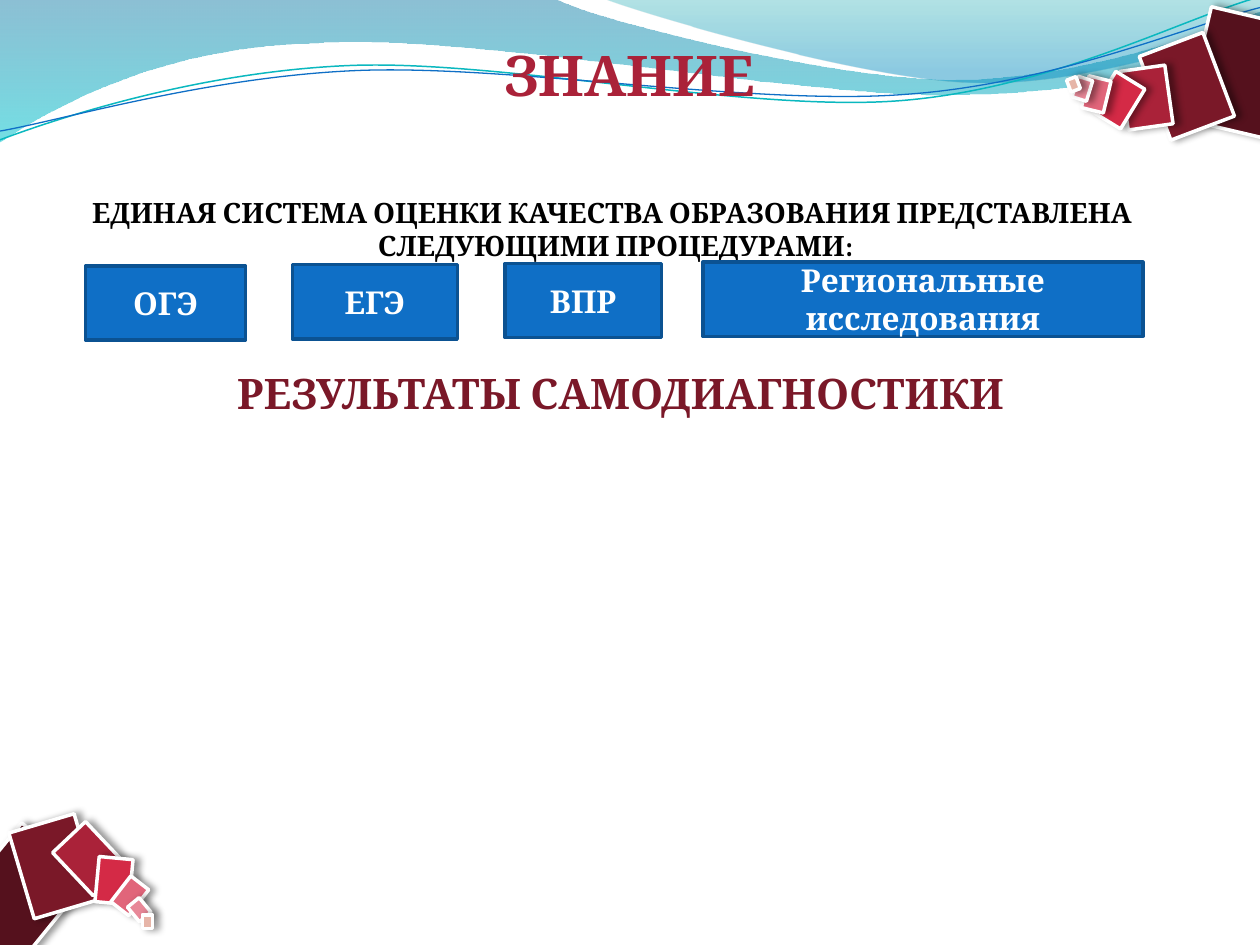
import math
import pptx
import pptx.util
import pptx.dml.color
import pptx.enum.shapes
import pptx.enum.text
import pptx.oxml
import pptx.oxml.ns

WIDTH, HEIGHT = pptx.util.Inches(10), pptx.util.Inches(7.5)
COLUMN, ROW = WIDTH / 100, HEIGHT / 75  # grid of 100 columns by 75 rows
FONT = "Cambria"
WHITE, CRIMSON, DARK_RED = "FFFFFF", "AA2239", "7A1828"
SQUARE_COLOURS = ["55111D", DARK_RED, CRIMSON, "D42A46", "E1657A", "E88898", "E6B5A8"]
NAMESPACE = pptx.oxml.ns.nsdecls("a")
LINE_TILT = -2.7

# Each curve is a start point followed by Bezier segments (three points)
# or straight segments (one point), in columns and rows.
BROAD_WAVE = [
    [(0, 0)], [(44, -0.1)], [(47.6, 1.7), (66.4, 6.3), (75.8, 6.3)],
    [(85.3, 6.3), (95.8, 2.6), (100, 0.9)], [(100.1, 3.6)],
    [(98.3, 4.4), (87, 7.6), (74.6, 7.5)], [(62.2, 7.5), (38.2, 2.8), (25.7, 3.4)],
    [(12.9, 3.6), (4.6, 8.3), (-0.1, 11.3)], [(0, 0)],
]
RIGHT_WAVE = [
    [(47.9, -0.1)], [(50.9, 1.1), (68.2, 6.2), (76.9, 6.5)],
    [(85.6, 6.9), (96.1, 3.2), (100, 2.1)], [(100, 0)], [(47.9, -0.1)],
]
TEAL_LINE = [
    [(0, 11.1)], [(4.8, 9.3), (15.8, 5.7), (27.7, 5.2)],
    [(39.5, 4.7), (59.3, 8.9), (71.3, 8)], [(83.3, 7.1), (93.8, 1.5), (99.8, -0.2)],
]
BLUE_LINE = [
    [(0, 10.4)], [(4.7, 9.6), (16.4, 6.1), (28.3, 5.6)],
    [(40.3, 5.1), (59.7, 8.4), (71.7, 7.5)], [(83.6, 6.7), (94.1, 2.1), (100, 0.6)],
]
# Squares from large to small: left, top, width, height, rotation.
TOP_SQUARES = [
    (10.2, 0, 6.9, 9.2, 13.2), (6.7, 2.1, 5.4, 7.1, 339.3), (4.4, 4.2, 3.6, 4.7, 352),
    (2.1, 5.4, 3.7, 2.7, 301.5), (1.3, 5, 1.8, 2.6, 13.7), (0.5, 5, 1.2, 1.7, 17.2),
    (0, 5, 0.8, 1, 339.2),
]
BOTTOM_SQUARES = [
    (-3.1, 2.4, 9.2, 6.9, 309.1), (1.6, 0, 5.4, 7.1, 343.5), (5.3, 0.6, 3.6, 4.7, 316.7),
    (7.7, 2.9, 2.7, 3.6, 5.4), (9.4, 4.6, 1.8, 2.6, 37.7), (10.3, 6.4, 1.5, 1.2, 50.6),
    (11.3, 7.4, 0.8, 1.1, 0),
]
# Left and width of each procedure, within the row of procedures.
PROCEDURES = [("ОГЭ", 0, 12.7), ("ЕГЭ", 16.4, 13.1), ("ВПР", 33.3, 12.4),
              ("Региональные исследования", 49, 34.9)]


def colour(value):
    return pptx.dml.color.RGBColor.from_string(value)


def place(left, top, width, height):
    """Turn grid cells into slide lengths."""
    return [round(left * COLUMN), round(top * ROW), round(width * COLUMN), round(height * ROW)]


def set_line(shape, line_colour, points):
    shape.line.color.rgb = colour(line_colour)
    shape.line.width = pptx.util.Pt(points)


def write(shape, text, size, text_colour=WHITE, anchor="TOP"):
    frame = shape.text_frame
    frame.word_wrap = True
    frame.vertical_anchor = getattr(pptx.enum.text.MSO_ANCHOR, anchor)
    para = frame.paragraphs[0]
    para.alignment = pptx.enum.text.PP_ALIGN.CENTER
    span = para.add_run()
    span.text = text
    span.font.name, span.font.size, span.font.bold = FONT, pptx.util.Pt(size), True
    span.font.color.rgb = colour(text_colour)


def add_rectangle(page, box, fill, line_colour):
    kind = pptx.enum.shapes.MSO_SHAPE.RECTANGLE
    shape = page.shapes.add_shape(kind, *place(*box))
    shape.shadow.inherit = False
    shape.fill.solid()
    shape.fill.fore_color.rgb = colour(fill)
    set_line(shape, line_colour, 2)
    return shape


def add_heading(page, box, text, **format):
    write(page.shapes.add_textbox(*place(*box)), text, **format)


def turn(point, centre, degrees):
    cosine, sine = math.cos(math.radians(degrees)), math.sin(math.radians(degrees))
    x, y = point[0] - centre[0], point[1] - centre[1]
    return centre[0] + x * cosine - y * sine, centre[1] + x * sine + y * cosine


def add_curve(page, box, segments, close, tilt=0):
    """Draw the segments level within the box, then tilt the shape as a whole."""
    left, top, width, height = box
    centre = (left + width / 2, top + height / 2)
    points = [turn(point, centre, -tilt) for segment in segments for point in segment]
    points = [(x * COLUMN, y * ROW) for x, y in points]
    builder = page.shapes.build_freeform(*points[0], scale=1.0)
    builder.add_line_segments(points[1:], close=close)
    shape = builder.convert_to_shape()
    lines = list(shape.element.iter(pptx.oxml.ns.qn("a:lnTo")))
    for segment in segments[1:]:
        corners, lines = lines[:len(segment)], lines[len(segment):]
        if len(corners) == 3:
            bezier = pptx.oxml.parse_xml(f"<a:cubicBezTo {NAMESPACE}/>")
            corners[0].addprevious(bezier)
            for corner in corners:
                bezier.append(corner[0])
                corner.getparent().remove(corner)
    shape.rotation = tilt
    shape.shadow.inherit = False
    shape.fill.background()
    return shape


def add_waves(page):
    for box, segments, stops in (
        ((-0.1, -0.1, 100.2, 11.4), BROAD_WAVE, [(0, "0074A1", 45), (100, "00C6CF", 55)]),
        ((47.9, -0.1, 52.1, 7), RIGHT_WAVE, [(0, "00A1A9", 30), (80, "008BBF", 45)]),
    ):
        shape = add_curve(page, box, segments, close=True)
        shape.line.fill.background()
        stop_xml = "".join(
            f'<a:gs pos="{position * 1000}"><a:srgbClr val="{value}">'
            f'<a:alpha val="{alpha * 1000}"/></a:srgbClr></a:gs>'
            for position, value, alpha in stops)
        gradient = pptx.oxml.parse_xml(
            f'<a:gradFill {NAMESPACE} rotWithShape="1"><a:gsLst>{stop_xml}</a:gsLst>'
            '<a:lin ang="5400000" scaled="0"/></a:gradFill>')
        properties = shape.element.spPr
        properties.replace(properties.find(pptx.oxml.ns.qn("a:noFill")), gradient)
    for box, segments, value, points in (
        ((-0.2, 2.2, 100.2, 7.1), TEAL_LINE, "0AB8BF", 0.85),
        ((-0.2, 3, 100.3, 5.8), BLUE_LINE, "0F6FC6", 0.75),
    ):
        set_line(add_curve(page, box, segments, False, LINE_TILT), value, points)


def add_squares(page, box, squares):
    for fill, (left, top, width, height, rotation) in zip(SQUARE_COLOURS, squares):
        shape = add_rectangle(page, (box[0] + left, box[1] + top, width, height), fill, WHITE)
        shape.rotation = rotation
        effects = shape.element.spPr.find(pptx.oxml.ns.qn("a:effectLst"))
        effects.append(pptx.oxml.parse_xml(
            f'<a:outerShdw {NAMESPACE} blurRad="{pptx.util.Pt(4)}" dist="{pptx.util.Pt(3)}" '
            'dir="0" algn="l" rotWithShape="0"><a:srgbClr val="000000">'
            '<a:alpha val="40000"/></a:srgbClr></a:outerShdw>'))


def add_procedures(page, box):
    """Place the procedures in a row, each one slightly higher than the last."""
    for index, (name, left, width) in enumerate(PROCEDURES):
        cell = (box[0] + left, box[1] - 0.1 * index, width, box[3])
        write(add_rectangle(page, cell, "0F6FC6", "0B5292"), name, size=18, anchor="MIDDLE")


def main():
    deck = pptx.Presentation()
    deck.slide_width, deck.slide_height = WIDTH, HEIGHT
    page = deck.slides.add_slide(deck.slide_layouts[6])
    add_waves(page)
    add_squares(page, (84.8, 1.2, 17.1, 9.2), TOP_SQUARES)
    add_squares(page, (0, 65.2, 12.1, 9.3), BOTTOM_SQUARES)
    add_heading(page, (1.9, 15, 93.9, 15.1),
                "ЕДИНАЯ СИСТЕМА ОЦЕНКИ КАЧЕСТВА ОБРАЗОВАНИЯ ПРЕДСТАВЛЕНА  СЛЕДУЮЩИМИ ПРОЦЕДУРАМИ:",
                size=16, text_colour="000000")
    add_heading(page, (0, 2.7, 100, 6.4), "ЗНАНИЕ", size=32, text_colour=CRIMSON)
    add_procedures(page, (6.8, 21.1, 83.9, 5.9))
    add_heading(page, (0, 28.7, 98.5, 5), "РЕЗУЛЬТАТЫ САМОДИАГНОСТИКИ",
                size=24, text_colour=DARK_RED)
    deck.save("out.pptx")


if __name__ == "__main__":
    main()
